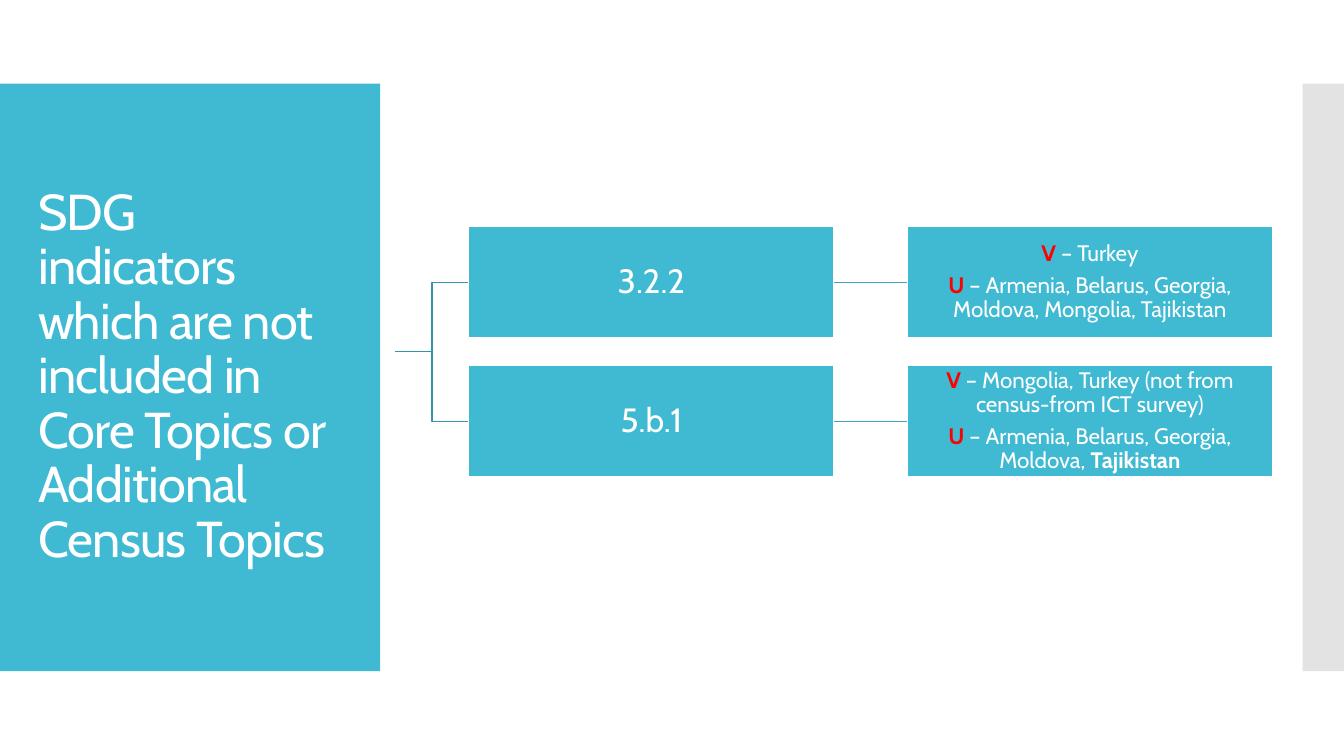
from dataclasses import dataclass
from typing import Optional

from lxml.etree import SubElement
from pptx import Presentation
from pptx.dml.color import RGBColor
from pptx.enum.shapes import MSO_CONNECTOR as Link, MSO_SHAPE as Shape
from pptx.enum.text import MSO_ANCHOR as Anchor, MSO_AUTO_SIZE as AutoSize, PP_ALIGN as Align
from pptx.oxml.ns import qn
from pptx.util import Emu, Pt

PX = 9144
FONT = "Cabin"
TEAL = RGBColor(0x40, 0xBA, 0xD2)
BRANCH_TEAL = RGBColor(0x33, 0x95, 0xA8)
LINK_TEAL = RGBColor(0x3A, 0xA9, 0xBF)
GREY = RGBColor(0xC8, 0xC8, 0xC8)
WHITE = RGBColor(0xFF, 0xFF, 0xFF)
RED = RGBColor(0xFF, 0x00, 0x00)

ROOT_X, INDICATOR_X, COUNTRIES_X = 392, 465, 900
BOX_W, BOX_H = 362, 110
FIRST_TOP, ROW_STEP = 225, 138


@dataclass(frozen=True)
class Run:
    text: str
    color: RGBColor = WHITE
    bold: bool = False


@dataclass(frozen=True)
class Indicator:
    code: str
    countries: list[list[Run]]


INDICATORS = [
    Indicator("3.2.2", [
        [Run("V", RED, True), Run(" – Turkey")],
        [Run("U", RED, True),
         Run(" – Armenia, Belarus, Georgia, Moldova, Mongolia, Tajikistan")],
    ]),
    Indicator("5.b.1", [
        [Run("V ", RED, True),
         Run("– Mongolia, Turkey (not from census-from ICT survey)")],
        [Run("U", RED, True), Run(" – Armenia, Belarus, Georgia, Moldova, "),
         Run("Tajikistan", bold=True)],
    ]),
]


def px(length: int) -> Emu:
    return Emu(length * PX)


def write(frame, paragraphs: list[list[Run]], *, size: int, align=Align.CENTER,
          inset: int = 2, gap: float = 0, spacing: Optional[int] = None) -> None:
    frame.word_wrap = True
    frame.auto_size = AutoSize.NONE
    frame.vertical_anchor = Anchor.MIDDLE
    frame.margin_left = frame.margin_right = px(inset)
    frame.margin_top = frame.margin_bottom = px(inset)
    for index, runs in enumerate(paragraphs):
        paragraph = frame.add_paragraph() if index else frame.paragraphs[0]
        paragraph.alignment = align
        paragraph.line_spacing = 0.9
        paragraph.space_before = Pt(gap if index else 0)
        for part in runs:
            run = paragraph.add_run()
            run.text = part.text
            run.font.name = FONT
            run.font.size = Pt(size)
            run.font.bold = part.bold
            run.font.color.rgb = part.color
            if spacing is not None:
                run.font._element.set("spc", str(spacing))


def add_box(slide, left: int, top: int, width: int, height: int, fill: RGBColor,
            outline: Optional[RGBColor] = None):
    box = slide.shapes.add_shape(Shape.RECTANGLE, px(left), px(top), px(width), px(height))
    box.shadow.inherit = False
    box.fill.solid()
    box.fill.fore_color.rgb = fill
    if outline is None:
        box.line.fill.background()
    else:
        box.line.color.rgb = outline
        box.line.width = Pt(0.85)
    return box


def add_link(slide, kind, start: tuple[int, int], end: tuple[int, int],
             color: RGBColor) -> None:
    link = slide.shapes.add_connector(kind, *map(px, start + end))
    link.line.color.rgb = color
    link.line.width = Pt(0.85)
    SubElement(link.element.spPr, qn("a:effectLst"))


def add_title_panel(slide) -> None:
    title = slide.shapes.title
    panel = add_box(slide, 0, 83, 377, 583, TEAL)
    title.element.addprevious(panel.element)
    title.left, title.top, title.width, title.height = map(px, (28, 123, 322, 503))
    heading = "SDG indicators which are not included in Core Topics or Additional Census Topics"
    write(title.text_frame, [[Run(heading)]], size=36, align=Align.LEFT, inset=10, spacing=-60)


def add_side_bar(slide) -> None:
    bar = add_box(slide, 1292, 83, 41, 583, GREY)
    color = bar.fill._xPr.find(qn("a:solidFill"))[0]
    SubElement(color, qn("a:alpha")).set("val", "50000")


def add_indicator(slide, indicator: Indicator, top: int, root_y: int) -> None:
    middle = top + BOX_H // 2
    add_link(slide, Link.ELBOW, (ROOT_X, root_y), (INDICATOR_X, middle), BRANCH_TEAL)
    add_link(slide, Link.STRAIGHT, (INDICATOR_X + BOX_W, middle), (COUNTRIES_X, middle), LINK_TEAL)
    code_box = add_box(slide, INDICATOR_X, top, BOX_W, BOX_H, TEAL, WHITE)
    write(code_box.text_frame, [[Run(indicator.code)]], size=24)
    countries_box = add_box(slide, COUNTRIES_X, top, BOX_W, BOX_H, TEAL, WHITE)
    write(countries_box.text_frame, indicator.countries, size=16, inset=1, gap=5.6)


def main() -> None:
    deck = Presentation()
    deck.slide_width, deck.slide_height = px(1333), px(750)
    slide = deck.slides.add_slide(deck.slide_layouts[5])
    add_title_panel(slide)
    add_side_bar(slide)
    root_y = FIRST_TOP + (ROW_STEP * (len(INDICATORS) - 1) + BOX_H) // 2
    for row, indicator in enumerate(INDICATORS):
        add_indicator(slide, indicator, FIRST_TOP + row * ROW_STEP, root_y)
    deck.save("out.pptx")


if __name__ == "__main__":
    main()
